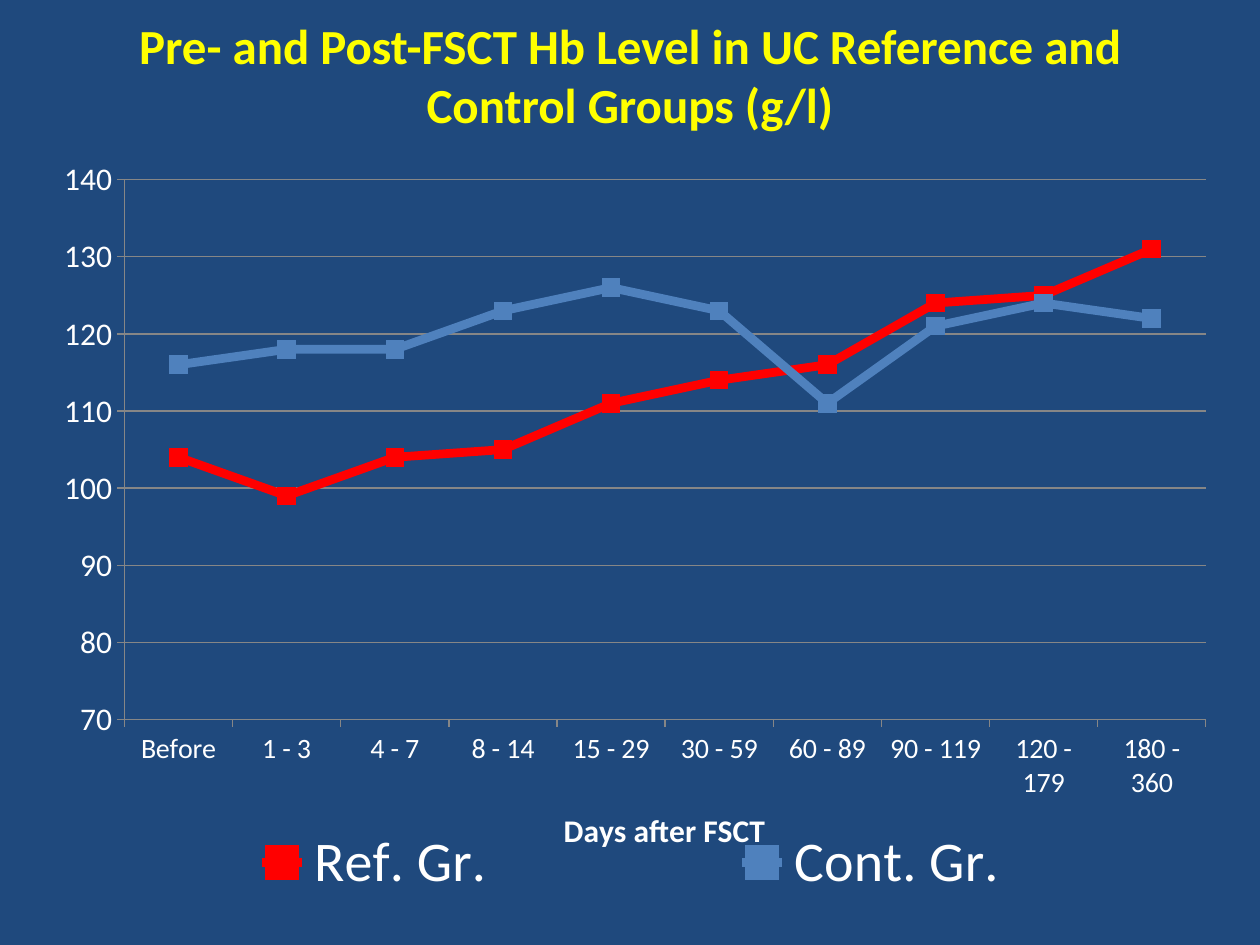
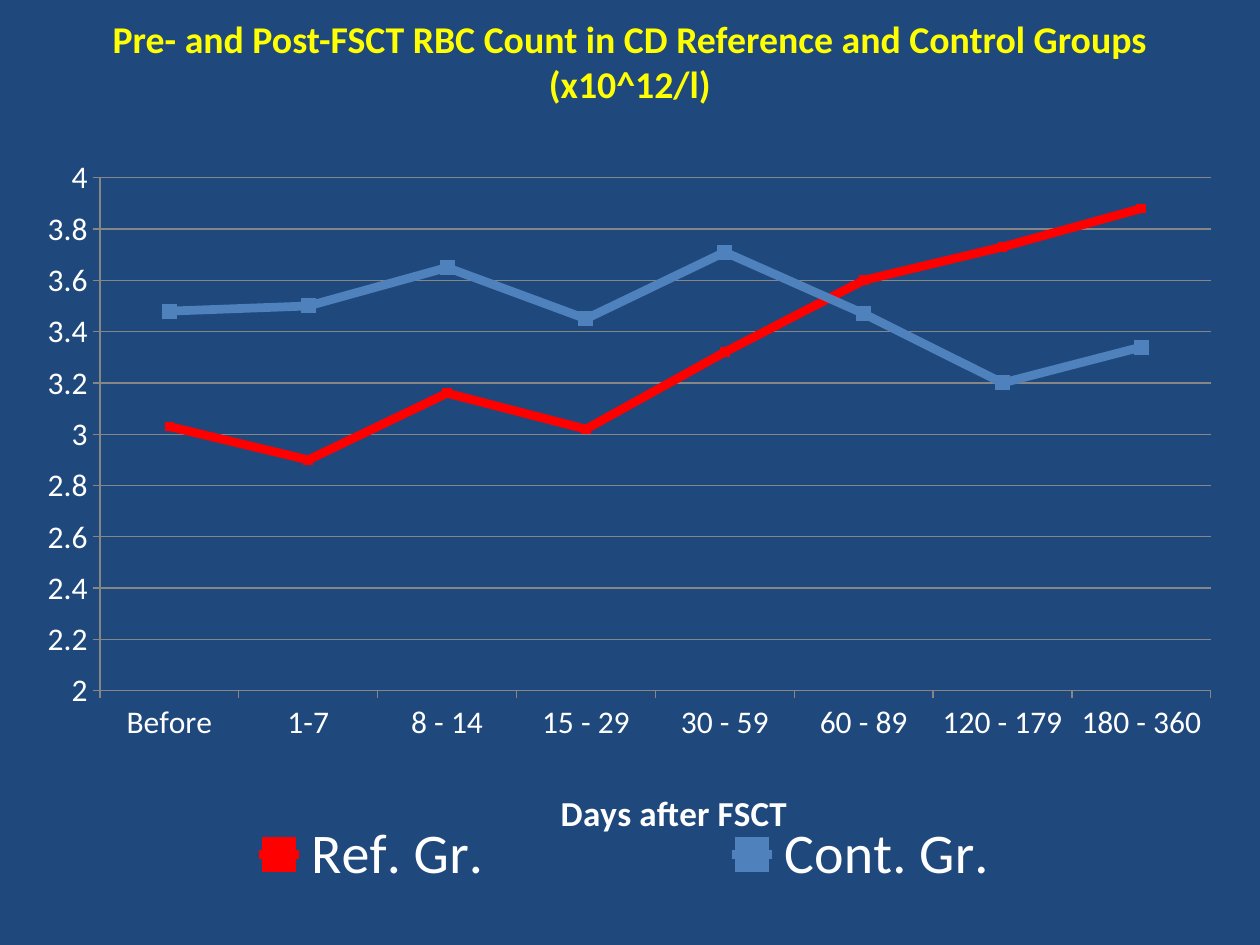
from lxml import etree
from pptx import Presentation
from pptx import util as u
from pptx.chart.data import CategoryChartData
from pptx.dml.color import RGBColor
from pptx.enum import chart as ch
from pptx.enum import text
from pptx.oxml import ns

FONT = "Calibri"
COLORS = {
    "background": "1F497D",
    "title": "FFFF00",
    "text": "FFFFFF",
    "reference": "FF0000",
    "control": "4F81BD",
    "grid": "868686",
}

HB_LEVEL = {
    "title": "Pre- and Post-FSCT Hb Level in UC Reference and Control Groups (g/l)",
    "title_size": 28,
    "box": (14.4, 82.8, 692, 442),
    "plot": (0.082, 0.045, 0.893, 0.698),
    "axis_title_at": (0.44, 0.85),
    "legend": (0.0, 0.88, 1.0, 0.095),
    "scale": (70, 140, 10),
    "category_size": 16,
    "axis_title_size": 18,
    "markers": (10, 10),
    "days": ["Before", "1 - 3", "4 - 7", "8 - 14", "15 - 29", "30 - 59",
             "60 - 89", "90 - 119", "120 - 179", "180 - 360"],
    "reference": [104, 99, 104, 105, 111, 114, 116, 124, 125, 131],
    "control": [116, 118, 118, 123, 126, 123, 111, 121, 124, 122],
}

RBC_COUNT = {
    "title": "Pre- and Post-FSCT RBC Count in CD Reference and Control Groups (х10^12/l)",
    "title_size": 21.6,
    "box": (16.6, 74.2, 687, 449),
    "plot": (0.059, 0.061, 0.924, 0.653),
    "axis_title_at": (0.437, 0.83),
    "legend": (0.0, 0.875, 0.99, 0.095),
    "scale": (2, 4, 0.2),
    "category_size": 18,
    "axis_title_size": 20,
    "markers": (5, 8),
    "days": ["Before", "1-7", "8 - 14", "15 - 29", "30 - 59", "60 - 89",
             "120 - 179", "180 - 360"],
    "reference": [3.03, 2.9, 3.16, 3.02, 3.32, 3.6, 3.73, 3.88],
    "control": [3.48, 3.5, 3.65, 3.45, 3.71, 3.47, 3.2, 3.34],
}


def color(name):
    return RGBColor.from_string(COLORS[name])


def style_font(font, size, name="text", bold=False):
    font.name = FONT
    font.size = u.Pt(size)
    font.bold = bold
    font.color.rgb = color(name)


def set_layout(element, index, position, inner=False):
    for old in element.findall(ns.qn("c:layout")):
        element.remove(old)
    layout = etree.Element(ns.qn("c:layout"))
    manual = etree.SubElement(layout, ns.qn("c:manualLayout"))
    settings = [("layoutTarget", "inner")] if inner else []
    settings += [("xMode", "edge"), ("yMode", "edge")]
    settings += list(zip("xywh", position))
    for tag, value in settings:
        etree.SubElement(manual, ns.qn("c:" + tag)).set("val", str(value))
    element.insert(index, layout)


def add_title(s, wording, size):
    sp = s.shapes.add_textbox(u.Pt(36), u.Pt(9), u.Pt(648), u.Pt(68))
    tf = sp.text_frame
    tf.word_wrap = True
    tf.margin_top = tf.margin_bottom = 0
    tf.vertical_anchor = text.MSO_ANCHOR.TOP
    p = tf.paragraphs[0]
    p.text = wording
    p.alignment = text.PP_ALIGN.CENTER
    style_font(p.runs[0].font, size, "title", True)


def style_axis(axis, size):
    style_font(axis.tick_labels.font, size)
    axis.major_tick_mark = ch.XL_TICK_MARK.OUTSIDE
    axis.minor_tick_mark = ch.XL_TICK_MARK.NONE
    style_line(axis.format.line, "grid", 0.75)


def style_line(line, name, width):
    line.color.rgb = color(name)
    line.width = u.Pt(width)


def style_series(series, name, marker_size):
    series.smooth = False
    style_line(series.format.line, name, 5)
    marker = series.marker
    marker.style = ch.XL_MARKER_STYLE.SQUARE
    marker.size = marker_size
    marker.format.fill.solid()
    marker.format.fill.fore_color.rgb = color(name)
    marker.format.line.color.rgb = color(name)


def add_group_chart(s, measure):
    data = CategoryChartData()
    data.categories = measure["days"]
    data.add_series("Ref. Gr.", measure["reference"])
    data.add_series("Cont. Gr.", measure["control"])
    box = [u.Pt(length) for length in measure["box"]]
    chart = s.shapes.add_chart(ch.XL_CHART_TYPE.LINE_MARKERS, *box, data).chart
    chart.has_title = False
    style_font(chart.font, 18)
    plot = chart.plots[0]
    plot.vary_by_categories = False
    for series, name, size in zip(plot.series, ("reference", "control"), measure["markers"]):
        style_series(series, name, size)

    values = chart.value_axis
    style_axis(values, 18)
    values.minimum_scale, values.maximum_scale, values.major_unit = measure["scale"]
    values.has_major_gridlines = True
    style_line(values.major_gridlines.format.line, "grid", 0.75)

    days = chart.category_axis
    style_axis(days, measure["category_size"])
    title = days.axis_title
    p = title.text_frame.paragraphs[0]
    p.text = "Days after FSCT"
    style_font(p.runs[0].font, measure["axis_title_size"], bold=True)

    chart.has_legend = True
    legend = chart.legend
    legend.position = ch.XL_LEGEND_POSITION.BOTTOM
    legend.include_in_layout = False
    style_font(legend.font, 32)

    plot_area = chart.element.find(".//" + ns.qn("c:plotArea"))
    set_layout(plot_area, 0, measure["plot"], inner=True)
    set_layout(plot_area.find(".//" + ns.qn("c:title")), 1, measure["axis_title_at"])
    set_layout(chart.element.find(".//" + ns.qn("c:legend")), 1, measure["legend"])


def add_measure_slide(prs, measure):
    s = prs.slides.add_slide(prs.slide_layouts[6])
    fill = s.background.fill
    fill.solid()
    fill.fore_color.rgb = color("background")
    add_title(s, measure["title"], measure["title_size"])
    add_group_chart(s, measure)


def main():
    prs = Presentation()
    prs.slide_width, prs.slide_height = u.Pt(720), u.Pt(540)
    for measure in (HB_LEVEL, RBC_COUNT):
        add_measure_slide(prs, measure)
    prs.save("out.pptx")


if __name__ == "__main__":
    main()
